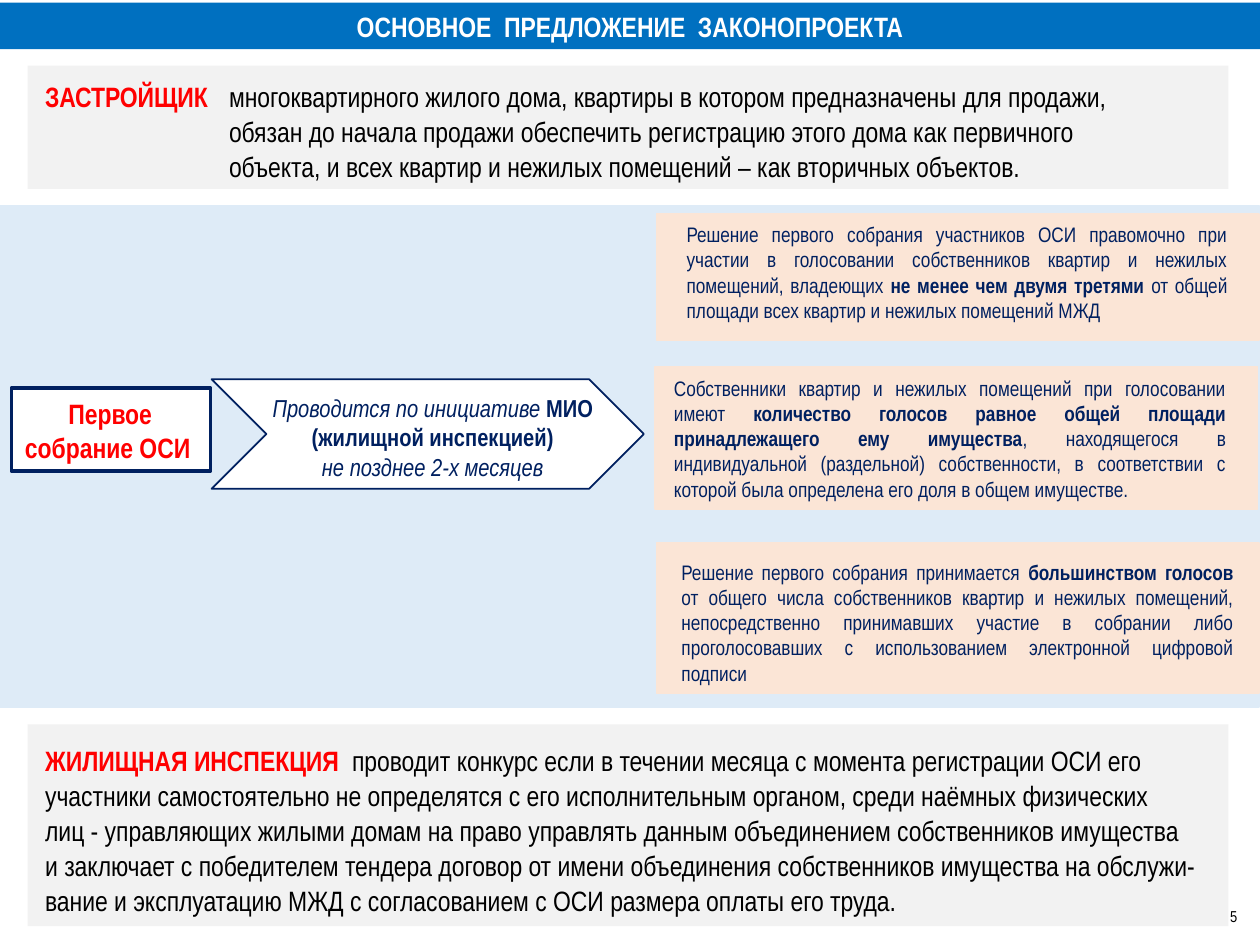
from pptx import Presentation
from pptx.dml.color import RGBColor
from pptx.enum.shapes import MSO_SHAPE as Shape
from pptx.enum.text import MSO_ANCHOR as Anchor, MSO_AUTO_SIZE as AutoSize, PP_ALIGN as Align
from pptx.util import Inches, Pt

COLORS = {"blue": "0070C0", "navy": "002060", "sky": "DEEBF7", "grey": "F2F2F2",
          "peach": "FBE5D6", "red": "FF0000", "black": "000000", "white": "FFFFFF"}
COLUMNS, ROWS = 100, 75


def color(name):
    """Return the palette colour of that name."""
    return RGBColor.from_string(COLORS[name])


def write(frame, paragraphs, size=16, ink="black", align=Align.LEFT, anchor=Anchor.TOP,
          spacing=None, hang=None, insets=(0.1, 0.05)):
    """Fill a frame with paragraphs, each a list of (text, format) runs."""
    frame.word_wrap, frame.auto_size = True, AutoSize.NONE
    frame.vertical_anchor = anchor
    frame.margin_left = frame.margin_right = Inches(insets[0])
    frame.margin_top = frame.margin_bottom = Inches(insets[1])
    for index, runs in enumerate(paragraphs):
        paragraph = frame.add_paragraph() if index else frame.paragraphs[0]
        paragraph.alignment = align[index] if isinstance(align, list) else align
        if spacing:
            paragraph.line_spacing = Pt(spacing)
        if hang:
            properties = paragraph._p.get_or_add_pPr()
            properties.set("marL", str(Inches(hang)))
            properties.set("indent", str(0 if index else -Inches(hang)))
        for text, style in runs:
            run = paragraph.add_run()
            run.text = text
            run.font.name, run.font.size = "Arial Narrow", Pt(size)
            run.font.bold = style.get("bold", False)
            run.font.italic = style.get("italic", False)
            run.font.color.rgb = color(style.get("ink", ink))


class Board:
    """Holds the current slide and places elements on its grid."""

    def __init__(self, deck):
        """Add a title-only slide with a white background."""
        self.deck = deck
        self.slide = deck.slides.add_slide(deck.slide_layouts[5])
        self.slide.background.fill.solid()
        self.slide.background.fill.fore_color.rgb = color("white")

    def place(self, left, top, width, height):
        """Turn columns and rows into slide lengths."""
        column, row = self.deck.slide_width / COLUMNS, self.deck.slide_height / ROWS
        return [round(n * unit) for n, unit in
                ((left, column), (top, row), (width, column), (height, row))]

    def title(self, box, text, fill):
        """Turn the title placeholder into a banner."""
        banner = self.slide.shapes.title
        banner.left, banner.top, banner.width, banner.height = self.place(*box)
        banner.fill.solid()
        banner.fill.fore_color.rgb = color(fill)
        write(banner.text_frame, [[(text, BOLD)]], ink="white", align=Align.CENTER,
              anchor=Anchor.MIDDLE)

    def panel(self, box, fill, line=None, weight=1, kind=Shape.RECTANGLE):
        """Add a filled preset shape."""
        panel = self.slide.shapes.add_shape(kind, *self.place(*box))
        panel.shadow.inherit = False
        panel.fill.solid()
        panel.fill.fore_color.rgb = color(fill)
        if line:
            panel.line.color.rgb = color(line)
            panel.line.width = Pt(weight)
        else:
            panel.line.fill.background()
        return panel

    def text(self, box, paragraphs, **style):
        """Add a text box."""
        write(self.slide.shapes.add_textbox(*self.place(*box)).text_frame, paragraphs, **style)


PLAIN, BOLD, ITALIC = {}, {"bold": True}, {"italic": True}
KEYWORD = {"bold": True, "ink": "red"}

DEVELOPER = [
    [("ЗАСТРОЙЩИК\t", KEYWORD),
     ("многоквартирного жилого дома, квартиры в котором предназначены для продажи,", PLAIN)],
    [("обязан до начала продажи обеспечить регистрацию этого дома как первичного", PLAIN)],
    [("объекта, и всех квартир и нежилых помещений – как вторичных объектов.", PLAIN)],
]
MEETING = [[("Первое ", KEYWORD)], [("собрание ОСИ", KEYWORD)]]
INITIATIVE = [
    [("Проводится по инициативе ", ITALIC), ("МИО (жилищной инспекцией)", BOLD)],
    [("не позднее 2-х месяцев", ITALIC)],
]
INSPECTION = [
    [("ЖИЛИЩНАЯ ИНСПЕКЦИЯ  ", KEYWORD),
     ("проводит конкурс если в течении месяца с момента регистрации ОСИ его участники "
      "самостоятельно не определятся с его исполнительным органом, среди наёмных физических",
      PLAIN)],
    [("лиц - управляющих жилыми домам на право управлять данным объединением "
      "собственников имущества", PLAIN)],
    [("и заключает с победителем тендера договор от имени объединения собственников имущества "
      "на обслужи-вание и эксплуатацию МЖД с согласованием с ОСИ размера оплаты его труда.",
      PLAIN)],
]
RULES = [
    ((52.1, 17, 47.8, 10), (53.5, 17.1, 44.9, 9.1), [
        ("Решение первого собрания участников ОСИ правомочно при участии в голосовании "
         "собственников квартир и нежилых помещений, владеющих ", PLAIN),
        ("не менее чем двумя третями ", BOLD),
        ("от общей площади всех квартир и нежилых помещений МЖД", PLAIN)]),
    ((52, 29.1, 47.8, 11.3), (52.5, 29.3, 45.8, 11.1), [
        ("Собственники квартир и нежилых помещений при голосовании имеют ", PLAIN),
        ("количество голосов равное общей площади принадлежащего ему имущества", BOLD),
        (", находящегося в индивидуальной (раздельной) собственности, в соответствии с "
         "которой была определена его доля в общем имуществе.", PLAIN)]),
    ((52.1, 43.1, 47.8, 11.9), (53.1, 43.9, 45.8, 11.1), [
        ("Решение первого собрания принимается ", PLAIN),
        ("большинством голосов ", BOLD),
        ("от общего числа собственников квартир и нежилых помещений, непосредственно "
         "принимавших участие в собрании либо проголосовавших с использованием электронной "
         "цифровой подписи", PLAIN)]),
]


def main():
    """Build the slide and save it."""
    deck = Presentation()
    deck.slide_width, deck.slide_height = Inches(10), Inches(7.5)
    board = Board(deck)

    board.title((0, 0.2, 100, 3.7), "ОСНОВНОЕ  ПРЕДЛОЖЕНИЕ  ЗАКОНОПРОЕКТА", "blue")
    number = board.panel((95.7, 70.7, 3.2, 4), "white")
    write(number.text_frame, [[("5", PLAIN)]], size=9, align=Align.RIGHT,
          anchor=Anchor.MIDDLE, insets=(0.07, 0.04))

    board.panel((0, 16.3, 99.9, 39.8), "sky", "sky")
    board.panel((2.2, 5.2, 95.3, 9.8), "grey")
    board.panel((16.8, 30.1, 34.3, 8.7), "white", "navy", kind=Shape.CHEVRON)
    board.text((2.6, 5.7, 96.3, 9.5), DEVELOPER, spacing=20, hang=1.46)

    board.panel((0.9, 30.8, 15.8, 6.6), "white", "navy", weight=2)
    board.text((1, 31, 16, 6.4), MEETING, align=[Align.CENTER, Align.LEFT])
    board.text((20.4, 30.7, 27.9, 8.1), INITIATIVE, size=14, ink="navy", align=Align.CENTER)

    board.panel((2.2, 57.5, 95.3, 16), "grey")
    board.text((2.6, 58.4, 94.8, 15), INSPECTION, spacing=20)

    for panel, box, rule in RULES:
        board.panel(panel, "peach", "peach")
        board.text(box, [rule], size=12, ink="navy", align=Align.JUSTIFY)

    deck.save("out.pptx")


if __name__ == "__main__":
    main()
